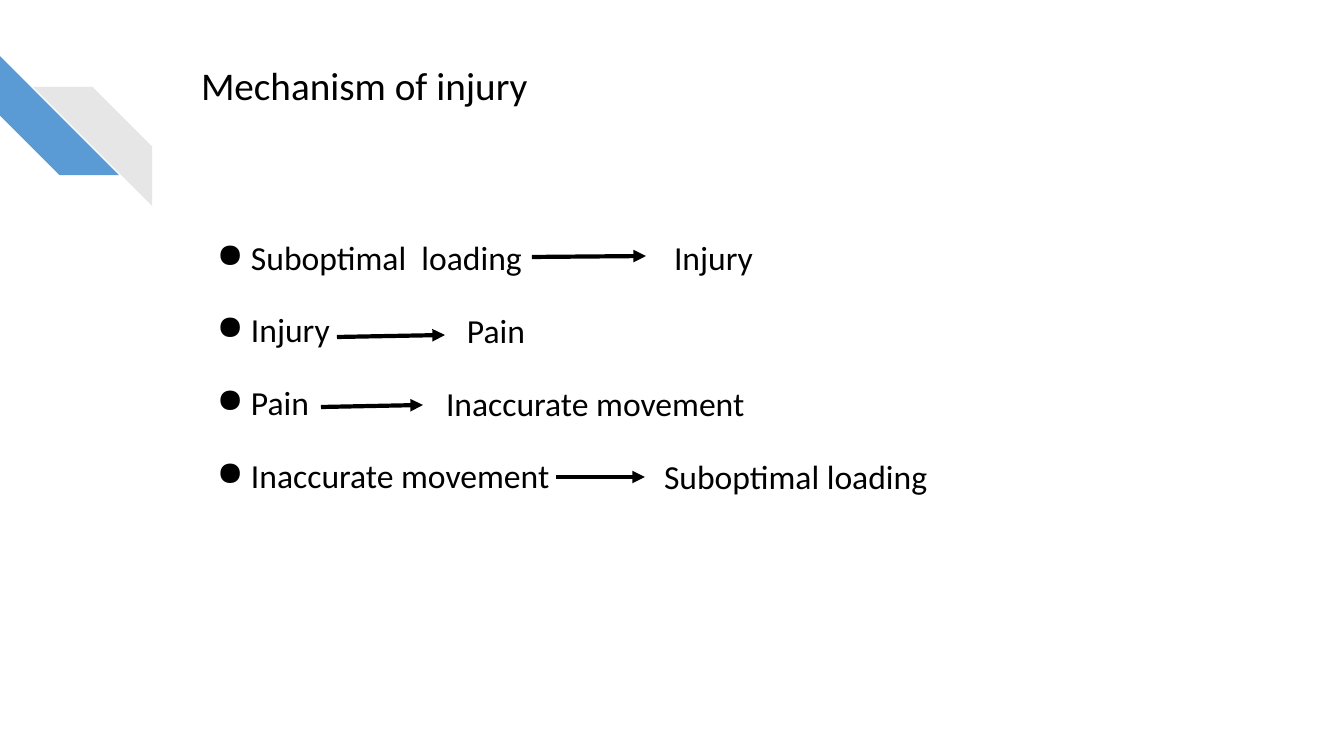
from lxml import etree
from pptx import Presentation
from pptx.dml.color import RGBColor
from pptx.enum.shapes import MSO_CONNECTOR, MSO_SHAPE
from pptx.enum.text import MSO_ANCHOR, MSO_AUTO_SIZE, PP_ALIGN
from pptx.oxml.ns import qn
from pptx.util import Pt

STRIPE = MSO_SHAPE.DIAGONAL_STRIPE
STRAIGHT = MSO_CONNECTOR.STRAIGHT
TOP, LEFT, NO_FIT = MSO_ANCHOR.TOP, PP_ALIGN.LEFT, MSO_AUTO_SIZE.NONE

PX = 9071  # EMU per px, at 100.8 px to the inch
FONT = "Calibri"
COLORS = {"text": "000000", "blue": "5B9BD5", "grey": "E7E6E6"}
INSET = 10
BODY_TOP, ROW_PITCH = 231, 73


def place(box, left, top, width, height):
    box.left, box.top, box.width, box.height = (
        value * PX for value in (left, top, width, height))


def format_text(box, size):
    frame = box.text_frame
    frame.word_wrap = True
    frame.auto_size = NO_FIT
    frame.vertical_anchor = TOP
    frame.margin_left = frame.margin_right = INSET * PX
    frame.margin_top = frame.margin_bottom = INSET * PX
    for para in frame.paragraphs:
        para.alignment = LEFT
        para.line_spacing = 0.9
        para.space_before = Pt(0)
        for span in para.runs:
            span.font.name = FONT
            span.font.size = Pt(size)
            span.font.color.rgb = RGBColor.from_string(COLORS["text"])


deck = Presentation()
deck.slide_width, deck.slide_height = 1344 * PX, 756 * PX
page = deck.slides.add_slide(deck.slide_layouts[5])

# Corner stripes
for left, top, rotation, color in ((0, 56, 270, "blue"), (33, 87, 90, "grey")):
    stripe = page.shapes.add_shape(STRIPE, left * PX, top * PX, 119 * PX, 119 * PX)
    stripe.rotation = rotation
    stripe.shadow.inherit = False
    stripe.fill.solid()
    stripe.fill.fore_color.rgb = RGBColor.from_string(COLORS[color])
    stripe.line.fill.background()

# Title
title = page.shapes.title
place(title, 191, 57, 1034, 134)
title.text_frame.text = "Mechanism of injury"
format_text(title, 28)

# Cause, effect, left edge of the effect, arrow start and end
steps = [
    ("Suboptimal  loading", "Injury", 674, (532, 257), (646, 256)),
    ("Injury", "Pain", 467, (337, 337), (445, 335)),
    ("Pain", "Inaccurate movement", 446, (321, 407), (423, 405)),
    ("Inaccurate movement", "Suboptimal loading", 664, (556, 477), (645, 477)),
]

# Bulleted causes
causes = page.shapes.add_textbox(0, 0, 0, 0)
place(causes, 191, BODY_TOP, 1034, 427)
causes.text_frame.text = "\n".join(step[0] for step in steps)
format_text(causes, 24)
for index, para in enumerate(causes.text_frame.paragraphs):
    if index:
        para.space_before = Pt(26)
    properties = para._p.get_or_add_pPr()
    properties.set("marL", str(50 * PX))
    properties.set("indent", str(-34 * PX))
    etree.SubElement(properties, qn("a:buChar")).set("char", "●")

# Effects and the arrows that lead to them
for row, (_, effect, left, start, end) in enumerate(steps):
    box = page.shapes.add_textbox(0, 0, 0, 0)
    place(box, left - INSET, BODY_TOP + row * ROW_PITCH, 340, 57)
    box.text_frame.text = effect
    format_text(box, 24)

    arrow = page.shapes.add_connector(
        STRAIGHT, *(value * PX for value in start + end))
    arrow.line.width = Pt(3)
    arrow.line.color.rgb = RGBColor.from_string(COLORS["text"])
    etree.SubElement(arrow.line._get_or_add_ln(), qn("a:tailEnd")).set("type", "triangle")
    etree.SubElement(arrow._element.spPr, qn("a:effectLst"))

deck.save("out.pptx")
